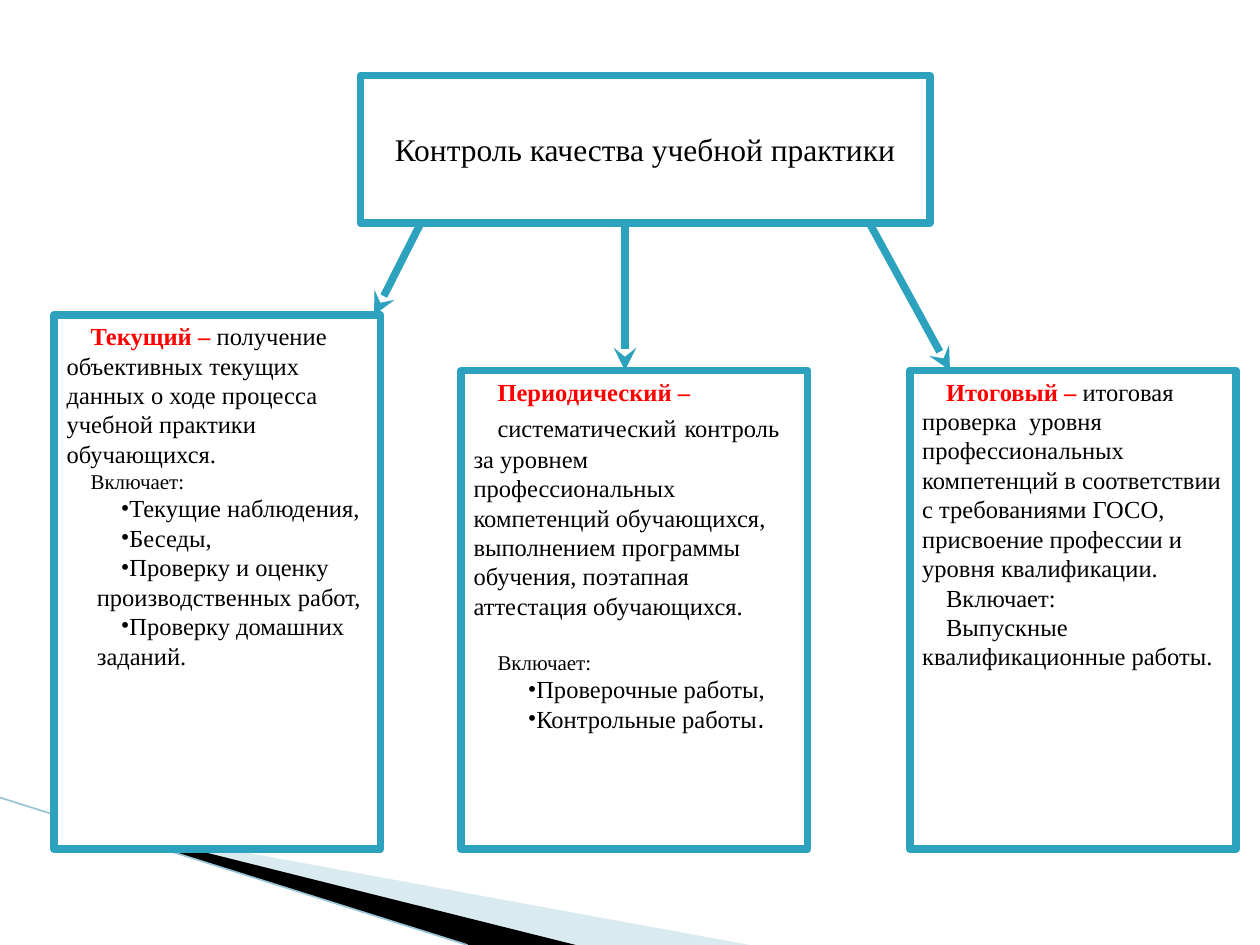
from dataclasses import dataclass

from lxml.etree import SubElement
from pptx import Presentation
from pptx.dml.color import RGBColor
from pptx.enum.shapes import MSO_CONNECTOR, MSO_SHAPE
from pptx.enum.text import MSO_ANCHOR, PP_ALIGN
from pptx.oxml.ns import qn
from pptx.util import Inches, Pt

# Grid of 100 columns and 75 rows on a 10 x 7.5 inch slide
CELL = Inches(10) // 100
BORDER = "2DA2BF"
BLACK, WHITE, RED = "000000", "FFFFFF", "FF0000"
BORDER_WIDTH = 4.33
TITLE_BOTTOM, COLUMN_TOP, COLUMN_BOTTOM = 17.7, 29.4, 67.4
FIRST_LINE, BULLET_MARGIN = 0.19, 0.24


@dataclass(frozen=True)
class TextRun:
    text: str
    size: float = 14
    color: str = BLACK
    bold: bool = False
    font: str = "Times New Roman"


@dataclass(frozen=True)
class Item:
    runs: tuple[TextRun, ...]
    bullet: bool = False
    space_before: float = 0


@dataclass(frozen=True)
class Box:
    left: float
    top: float
    width: float
    bottom: float
    items: tuple[Item, ...]
    centered: bool = False


@dataclass(frozen=True)
class Line:
    start: tuple[float, float]
    end: tuple[float, float]


@dataclass(frozen=True)
class Wedge:
    points: tuple[tuple[float, float], ...]
    color: str
    opacity: int = 100


def plain(text: str, size: float = 14, space_before: float = 0) -> Item:
    return Item((TextRun(text, size),), space_before=space_before)


def bullet(text: str, *more: TextRun) -> Item:
    return Item((TextRun(text), *more), bullet=True)


def heading(term: str, rest: str = "") -> Item:
    """Bold red term, followed by its explanation on the same line."""
    runs = (TextRun(term, color=RED, bold=True),)
    return Item(runs + ((TextRun(rest),) if rest else ()))


WEDGES = (
    Wedge(((5.5, 65.1), (59.5, 75), (45.6, 75), (5.5, 65)), "A0CBDC", 40),
    Wedge(((5.3, 64.9), (45.7, 75), (37.2, 75), (5.4, 65)), BLACK),
)
EDGE = Line((0, 63.3), (37.1, 75))

TITLE = Box(28.6, 6, 45.2, TITLE_BOTTOM,
            (plain("Контроль качества учебной практики", 18),), centered=True)
CURRENT = Box(4.3, 25, 25.9, COLUMN_BOTTOM, (
    heading("Текущий – ", "получение объективных текущих данных о ходе процесса "
            "учебной практики обучающихся."),
    plain("Включает:", 12),
    bullet("Текущие наблюдения,"),
    bullet("Беседы,"),
    bullet("Проверку и оценку производственных работ,"),
    bullet("Проверку домашних заданий."),
))
PERIODIC = Box(36.6, COLUMN_TOP, 27.5, COLUMN_BOTTOM, (
    heading("Периодический –"),
    Item((
        TextRun("систематический"),
        TextRun(" ", 18),
        TextRun("контроль за уровнем профессиональных компетенций обучающихся, "
                "выполнением программы обучения, поэтапная аттестация обучающихся."),
    )),
    plain("Включает:", 12, space_before=16.5),
    bullet("Проверочные работы,"),
    bullet("Контрольные работы", TextRun(".", font="DejaVu Sans")),
))
FINAL = Box(72.2, COLUMN_TOP, 25.9, COLUMN_BOTTOM, (
    heading("Итоговый –", " итоговая проверка  уровня профессиональных компетенций "
            "в соответствии с требованиями ГОСО, присвоение профессии и уровня "
            "квалификации."),
    plain("Включает:"),
    plain("Выпускные квалификационные работы."),
))
ARROWS = (
    Line((33.4, TITLE_BOTTOM), (29.7, CURRENT.top)),
    Line((49.6, TITLE_BOTTOM), (49.6, COLUMN_TOP)),
    Line((69, TITLE_BOTTOM), (75.4, COLUMN_TOP)),
)


def grid(cells: float) -> int:
    return round(cells * CELL)


def rgb(color: str) -> RGBColor:
    return RGBColor.from_string(color)


def draw_wedge(slide, wedge: Wedge) -> None:
    builder = slide.shapes.build_freeform(
        *(grid(value) for value in wedge.points[0]), scale=1.0)
    builder.add_line_segments(
        [(grid(x), grid(y)) for x, y in wedge.points[1:]], close=True)
    shape = builder.convert_to_shape()
    shape.shadow.inherit = False
    shape.fill.solid()
    shape.fill.fore_color.rgb = rgb(wedge.color)
    shape.line.fill.background()
    if wedge.opacity < 100:
        color = shape.fill._xPr.find(qn("a:solidFill"))[0]
        SubElement(color, qn("a:alpha"), val=str(wedge.opacity * 1000))


def draw_line(slide, line: Line, color: str, width: float, arrow: bool = False) -> None:
    connector = slide.shapes.add_connector(
        MSO_CONNECTOR.STRAIGHT, *(grid(value) for value in line.start + line.end))
    connector.line.color.rgb = rgb(color)
    connector.line.width = Pt(width)
    if arrow:
        SubElement(connector.line._get_or_add_ln(), qn("a:tailEnd"), type="stealth")
    SubElement(connector._element.spPr, qn("a:effectLst"))


def write_item(paragraph, item: Item, centered: bool) -> None:
    paragraph.alignment = PP_ALIGN.CENTER if centered else PP_ALIGN.LEFT
    if item.space_before:
        paragraph.space_before = Pt(item.space_before)
    if not centered:
        properties = paragraph._p.get_or_add_pPr()
        properties.set("marL", str(Inches(BULLET_MARGIN if item.bullet else 0)))
        properties.set("indent", str(Inches(FIRST_LINE)))
        if item.bullet:
            SubElement(properties, qn("a:buFont"), typeface="Times New Roman")
            SubElement(properties, qn("a:buChar"), char="•")
    for text_run in item.runs:
        run = paragraph.add_run()
        run.text = text_run.text
        run.font.name = text_run.font
        run.font.size = Pt(text_run.size)
        run.font.bold = text_run.bold
        run.font.color.rgb = rgb(text_run.color)


def draw_box(slide, box: Box) -> None:
    shape = slide.shapes.add_shape(
        MSO_SHAPE.RECTANGLE, grid(box.left), grid(box.top),
        grid(box.width), grid(box.bottom - box.top))
    shape.shadow.inherit = False
    shape.fill.solid()
    shape.fill.fore_color.rgb = rgb(WHITE)
    shape.line.color.rgb = rgb(BORDER)
    shape.line.width = Pt(BORDER_WIDTH)
    frame = shape.text_frame
    frame.word_wrap = True
    frame.vertical_anchor = MSO_ANCHOR.MIDDLE if box.centered else MSO_ANCHOR.TOP
    for index, item in enumerate(box.items):
        paragraph = frame.add_paragraph() if index else frame.paragraphs[0]
        write_item(paragraph, item, box.centered)


def main() -> None:
    presentation = Presentation()
    presentation.slide_width, presentation.slide_height = grid(100), grid(75)
    slide = presentation.slides.add_slide(presentation.slide_layouts[6])
    for wedge in WEDGES:
        draw_wedge(slide, wedge)
    draw_line(slide, EDGE, "97C5D8", 0.95)
    for box in (TITLE, PERIODIC, CURRENT, FINAL):
        draw_box(slide, box)
    for arrow in ARROWS:
        draw_line(slide, arrow, BORDER, BORDER_WIDTH, arrow=True)
    presentation.save("out.pptx")


if __name__ == "__main__":
    main()
